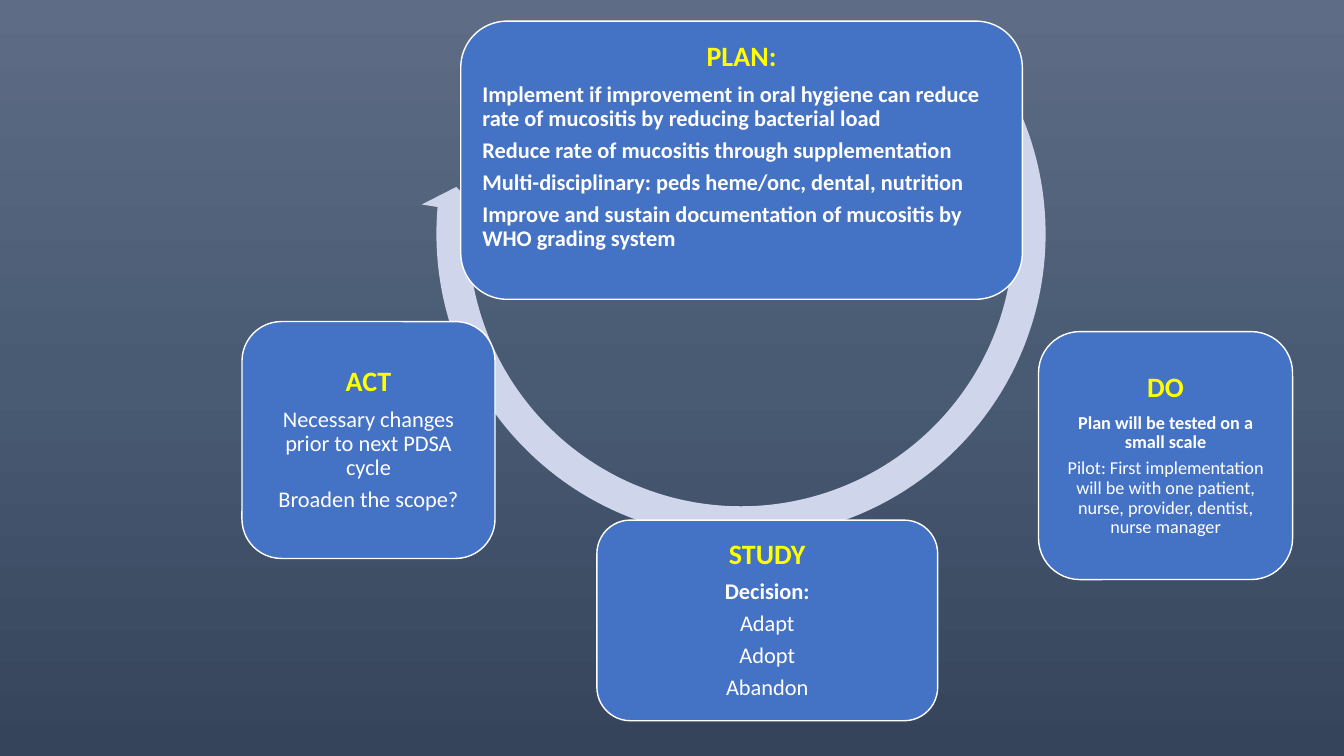
from copy import deepcopy
from dataclasses import dataclass

from lxml.etree import SubElement
from pptx import Presentation
from pptx.dml.color import RGBColor
from pptx.enum.shapes import MSO_SHAPE
from pptx.enum.text import MSO_ANCHOR, PP_ALIGN
from pptx.oxml.ns import qn
from pptx.shapes.autoshape import Shape
from pptx.slide import Slide
from pptx.text.text import TextFrame
from pptx.util import Inches, Pt

WHITE, YELLOW, BLUE, PALE = "FFFFFF", "FFFF00", "4472C4", "CFD5EA"
CENTER, LEFT = PP_ALIGN.CENTER, PP_ALIGN.LEFT


@dataclass
class Line:
    text: str
    bold: bool = False


@dataclass
class Card:
    title: str
    place: tuple[float, float, float, float]
    lines: list[Line]
    size: int = 16
    align: PP_ALIGN = CENTER
    anchor: MSO_ANCHOR = MSO_ANCHOR.MIDDLE


CARDS = [
    Card("PLAN:", (4.57, 0.21, 5.57, 2.76), [
        Line("Implement if improvement in oral hygiene can reduce rate of mucositis by reducing bacterial load", True),
        Line("Reduce rate of mucositis through supplementation", True),
        Line("Multi-disciplinary: peds heme/onc, dental, nutrition", True),
        Line("Improve and sustain documentation of mucositis by WHO grading system", True),
    ], align=LEFT, anchor=MSO_ANCHOR.TOP),
    Card("DO", (10.3, 3.29, 2.52, 2.46), [
        Line("Plan will be tested on a small scale", True),
        Line("Pilot: First implementation will be with one patient, nurse, provider, dentist, nurse manager"),
    ], size=13),
    Card("STUDY", (5.92, 5.16, 3.38, 1.99), [
        Line("Decision:", True),
        Line("Adapt"),
        Line("Adopt"),
        Line("Abandon"),
    ]),
    Card("ACT", (2.4, 3.19, 2.51, 2.35), [
        Line("Necessary changes prior to next PDSA cycle"),
        Line("Broaden the scope?"),
    ]),
]


def color(code: str) -> RGBColor:
    return RGBColor.from_string(code)


def add_shape(slide: Slide, kind: MSO_SHAPE, place: tuple, fill: str) -> Shape:
    shape = slide.shapes.add_shape(kind, *map(Inches, place))
    shape.shadow.inherit = False
    shape.fill.solid()
    shape.fill.fore_color.rgb = color(fill)
    shape.line.fill.background()
    return shape


def add_text(frame: TextFrame, text: str, *, size: int, tint: str = WHITE,
             bold: bool = False, align: PP_ALIGN = CENTER, first: bool = False) -> None:
    para = frame.paragraphs[0] if first else frame.add_paragraph()
    para.alignment = align
    para.line_spacing = 0.9
    para.space_after = Pt(0)
    after = para._p.pPr.find(qn("a:spcAft"))
    after.remove(after[0])
    SubElement(after, qn("a:spcPct"), val="35000")
    run = para.add_run()
    run.text = text
    run.font.name = "Calibri"
    run.font.size = Pt(size)
    run.font.bold = bold
    run.font.color.rgb = color(tint)


def add_card(slide: Slide, card: Card) -> None:
    shape = add_shape(slide, MSO_SHAPE.ROUNDED_RECTANGLE, card.place, BLUE)
    shape.line.color.rgb = color(WHITE)
    shape.line.width = Pt(1)
    frame = shape.text_frame
    frame.word_wrap = True
    frame.vertical_anchor = card.anchor
    frame.margin_left = frame.margin_right = Inches(0.08)
    frame.margin_top = frame.margin_bottom = Inches(0.08)
    add_text(frame, card.title, size=20, tint=YELLOW, bold=True, first=True)
    for line in card.lines:
        add_text(frame, line.text, size=card.size, bold=line.bold, align=card.align)


def add_arrow(slide: Slide) -> None:
    arrow = add_shape(slide, MSO_SHAPE.CIRCULAR_ARROW, (4.17, -0.86, 6.36, 6.36), PALE)
    for index, value in enumerate((0.05, 2.73, 110.88, 193.78, 0.05)):
        arrow.adjustments[index] = value


def paint_back(slide: Slide) -> None:
    fill = slide.background.fill
    fill.gradient()
    fill.gradient_angle = 270
    stops = slide.element.find(".//" + qn("a:gsLst"))
    stops.insert(1, deepcopy(stops[0]))
    for stop, place, code in zip(fill.gradient_stops, (0, 0.5, 1), ("5E6D85", "495A73", "35445A")):
        stop.position = place
        stop.color.rgb = color(code)


def main() -> None:
    deck = Presentation()
    deck.slide_width, deck.slide_height = Inches(13.33), Inches(7.5)
    slide = deck.slides.add_slide(deck.slide_layouts[6])
    paint_back(slide)
    add_arrow(slide)
    for card in CARDS:
        add_card(slide, card)
    deck.save("out.pptx")


if __name__ == "__main__":
    main()
